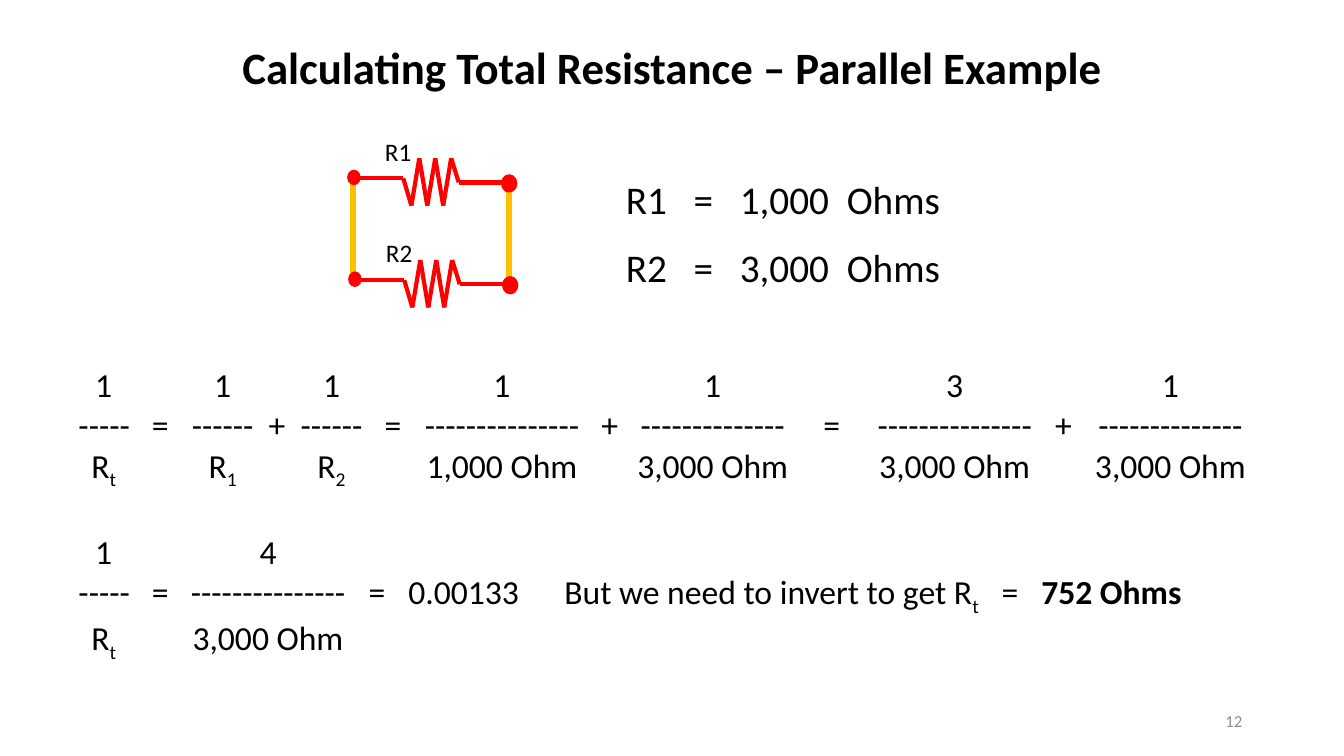
from dataclasses import dataclass
from itertools import pairwise

from lxml.etree import SubElement
from pptx import Presentation
from pptx.dml.color import RGBColor
from pptx.enum.shapes import MSO_CONNECTOR, MSO_SHAPE
from pptx.enum.text import MSO_ANCHOR as Anchor, PP_ALIGN as Align
from pptx.oxml.ns import qn
from pptx.util import Inches, Pt


@dataclass(frozen=True)
class Theme:
    font: str = "Calibri"
    ink: str = "000000"
    muted: str = "8C8C8C"
    wire: str = "FF0000"
    bus: str = "FFC000"
    title: int = 32
    given: int = 28
    equation: int = 24
    label: int = 18
    footer: int = 12
    wire_width: float = 3
    bus_width: float = 4.5
    columns: float = 133.3
    rows: float = 75


class SlideBuilder:
    """Draws on one slide; every length is in grid columns and rows."""

    def __init__(self, presentation, theme):
        self.theme = theme
        self.slide = presentation.slides.add_slide(presentation.slide_layouts[6])
        self.column = presentation.slide_width / theme.columns
        self.row = presentation.slide_height / theme.rows

    def place(self, x, y):
        return round(x * self.column), round(y * self.row)

    def text_box(self, left, top, width, height, anchor=Anchor.TOP, wrap=True):
        box = self.slide.shapes.add_textbox(*self.place(left, top), *self.place(width, height))
        box.text_frame.word_wrap = wrap
        box.text_frame.vertical_anchor = anchor
        return box.text_frame

    def run(self, paragraph, text, size, color=None, bold=False, subscript=False):
        run = paragraph.add_run()
        run.text = text
        font = run.font
        font.name, font.size, font.bold = self.theme.font, Pt(size), bold
        font.color.rgb = RGBColor.from_string(color or self.theme.ink)
        if subscript:
            run._r.get_or_add_rPr().set("baseline", "-25000")

    def text(self, bounds, text, size, color=None, bold=False, align=Align.LEFT, **frame):
        paragraph = self.text_box(*bounds, **frame).paragraphs[0]
        paragraph.alignment = align
        self.run(paragraph, text, size, color, bold)
        return paragraph

    def tab_stops(self, paragraph, stops):
        """Add (column, alignment) stops, measured from the text's left edge."""
        tab_list = SubElement(paragraph._p.get_or_add_pPr(), qn("a:tabLst"))
        for column, alignment in stops:
            SubElement(tab_list, qn("a:tab"), pos=str(round(column * self.column)), algn=alignment)

    def equation_line(self, paragraph, cells):
        """Write (column, alignment, text) cells; "_" starts a subscript and "*" marks bold."""
        self.tab_stops(paragraph, [cell[:2] for cell in cells])
        for _, _, text in cells:
            base, _, subscript = text.partition("_")
            self.run(paragraph, "\t", self.theme.equation)
            self.run(paragraph, base.strip("*"), self.theme.equation, bold=base.startswith("*"))
            if subscript:
                self.run(paragraph, subscript, self.theme.equation, subscript=True)

    def line(self, start, end, color, width):
        connector = self.slide.shapes.add_connector(
            MSO_CONNECTOR.STRAIGHT, *self.place(*start), *self.place(*end))
        connector.line.color.rgb = RGBColor.from_string(color)
        connector.line.width = Pt(width)
        SubElement(connector._element.spPr, qn("a:effectLst"))

    def dot(self, left, top, outline):
        shape = self.slide.shapes.add_shape(
            MSO_SHAPE.OVAL, *self.place(left, top), *self.place(1.2, 1.4))
        shape.shadow.inherit = False
        shape.fill.solid()
        shape.fill.fore_color.rgb = RGBColor.from_string(self.theme.wire)
        shape.line.color.rgb = RGBColor.from_string(self.theme.wire)
        shape.line.width = Pt(outline)

    def resistor(self, name, left, top):
        """Draw a zigzag between two dots; left and top are those of the left dot."""
        theme = self.theme
        zigzag = [(left + 6.3 + 0.79 * step, top + (3.5 if step % 2 else -1.2))
                  for step in range(1, 7)]
        points = [(left + 1.2, top + 0.8), (left + 5.5, top + 0.8),
                  *[(x - 0.79 + 0.0, y) for x, y in zigzag],
                  (left + 11.0, top + 1.2), (left + 15.4, top + 1.2)]
        for start, end in pairwise(points):
            self.line(start, end, theme.wire, theme.wire_width)
        self.dot(left + 15.4, top + 0.6, theme.wire_width)
        self.dot(left, top, 1)
        self.text((left + 2.7, top - 3.9, 4.7, 4), name, theme.label, wrap=False)


GIVENS = [("R1", "1,000"), ("R2", "3,000")]
GIVEN_STOPS = [(6.7, "l"), (11.3, "l"), (21.9, "l")]

# Each fraction: centre column, numerator, bar length, denominator
SUM_FRACTIONS = [
    (2.5, "1", 5, "R_t"), (14.3, "1", 6, "R_1"), (25.1, "1", 6, "R_2"),
    (42, "1", 15, "1,000 Ohm"), (62.9, "1", 14, "3,000 Ohm"),
    (86.9, "3", 15, "3,000 Ohm"), (108.3, "1", 14, "3,000 Ohm"),
]
SUM_SIGNS = [(8.1, "ctr", "="), (19.7, "ctr", "+"), (31.2, "ctr", "="),
             (52.7, "ctr", "+"), (74.7, "ctr", "="), (97.7, "ctr", "+")]
RESULT_FRACTIONS = [(2.5, "1", 5, "R_t"), (18.8, "4", 15, "3,000 Ohm")]
RESULT_SIGNS = [(8.1, "ctr", "="), (29.6, "ctr", "="), (38.2, "ctr", "0.00133"),
                (48.2, "l", "But we need to invert to get R_t"),
                (92.4, "ctr", "="), (95.5, "l", "*752 Ohms*")]


def fraction_lines(fractions, signs):
    """Return the numerator, bar and denominator lines as tabbed cells."""
    bars = [(column, "ctr", "-" * length) for column, _, length, _ in fractions]
    return [
        [(column, "ctr", numerator) for column, numerator, _, _ in fractions],
        sorted(bars + signs),
        [(column, "ctr", denominator) for column, _, _, denominator in fractions],
    ]


def main():
    theme = Theme()
    presentation = Presentation()
    presentation.slide_width, presentation.slide_height = Inches(13.33), Inches(7.5)
    builder = SlideBuilder(presentation, theme)

    for index, (name, value) in enumerate(GIVENS):
        given = builder.text((61.1, 16.9 + 6.7 * index, 36.5, 5.7),
                             f"{name}\t=\t{value}\tOhms", theme.given)
        builder.tab_stops(given, GIVEN_STOPS)

    for x, top, bottom in [(50.5, 18.8, 28.7), (35, 18.3, 27.3)]:
        builder.line((x, bottom), (x, top), theme.bus, theme.bus_width)
    for index, (name, _) in enumerate(GIVENS):
        builder.resistor(name, 34.5 + 0.1 * index, 16.9 + 10.1 * index)

    equations = builder.text_box(6.8, 35.6, 123.1, 29.3)
    paragraph = equations.paragraphs[0]
    for block, (fractions, signs) in enumerate(
            [(SUM_FRACTIONS, SUM_SIGNS), (RESULT_FRACTIONS, RESULT_SIGNS)]):
        for number, cells in enumerate(fraction_lines(fractions, signs)):
            if block or number:
                paragraph = equations.add_paragraph()
            if block and not number:
                paragraph.space_before = Pt(29)
            builder.equation_line(paragraph, cells)

    builder.text((94.2, 69.5, 30, 4), "12", theme.footer, theme.muted,
                 align=Align.RIGHT, anchor=Anchor.MIDDLE)
    builder.text((21.7, 3.4, 90, 7.7), "Calculating Total Resistance – Parallel Example",
                 theme.title, bold=True, align=Align.CENTER)
    presentation.save("out.pptx")


if __name__ == "__main__":
    main()
